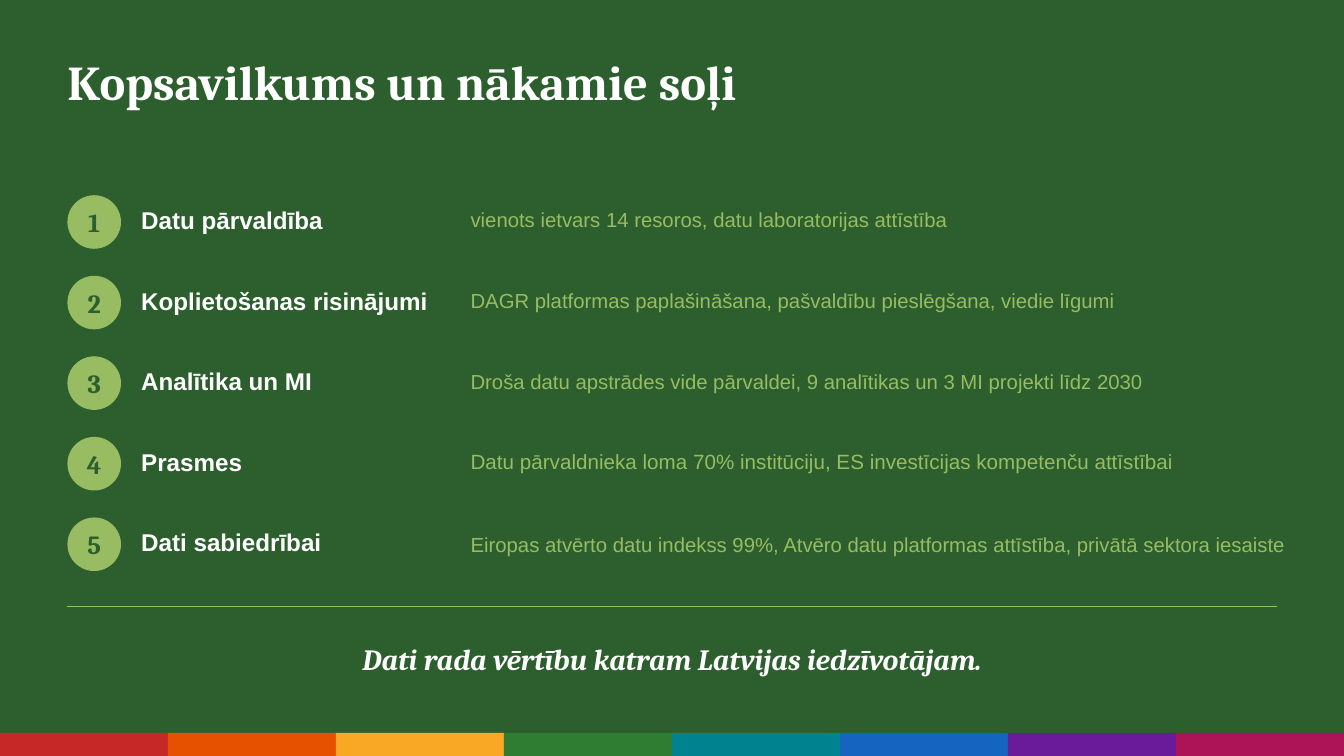
from lxml import etree
from pptx import Presentation
from pptx.dml.color import RGBColor
from pptx.enum.shapes import MSO_CONNECTOR, MSO_SHAPE
from pptx.enum.text import MSO_ANCHOR, PP_ALIGN
from pptx.oxml.ns import qn
from pptx.util import Cm, Pt

LEFT, CENTER = PP_ALIGN.LEFT, PP_ALIGN.CENTER
MIDDLE = MSO_ANCHOR.MIDDLE
OVAL, RECT = MSO_SHAPE.OVAL, MSO_SHAPE.RECTANGLE
STRAIGHT = MSO_CONNECTOR.STRAIGHT

COLORS = {"green": "2C5F2D", "lime": "97BC62", "white": "FFFFFF"}
STRIPES = ["C62828", "E65100", "F9A825", "2E7D32",
           "00838F", "1565C0", "6A1B9A", "AD1457"]
SERIF, SANS = "Cambria", "Arial"

SLIDE_W, SLIDE_H = 33.87, 19.05
MARGIN = 1.7
ROW_TOP, ROW_PITCH, ROW_H = 4.78, 2.03, 1.52
BADGE = 1.35
STRIPE_H = 0.58

# label, detail, detail size, detail width, detail shift down
STEPS = [
    ("Datu pārvaldība",
     "vienots ietvars 14 resoros, datu laboratorijas attīstība",
     14.5, 20.32, 0),
    ("Koplietošanas risinājumi",
     "DAGR platformas paplašināšana, pašvaldību pieslēgšana, viedie līgumi",
     14.5, 20.32, 0),
    ("Analītika un MI",
     "Droša datu apstrādes vide pārvaldei, 9 analītikas un 3 MI projekti līdz 2030",
     14.5, 20.32, 0),
    ("Prasmes",
     "Datu pārvaldnieka loma 70% institūciju, ES investīcijas kompetenču attīstībai",
     14.7, 20.32, 0),
    ("Dati sabiedrībai",
     "Eiropas atvērto datu indekss 99%, Atvēro datu platformas attīstība, "
     "privātā sektora iesaiste",
     14.5, 21.74, 0.06),
]


def rgb(value):
    return RGBColor.from_string(value)


def write(sp, text, size, font, color, bold=False, italic=False, align=LEFT):
    """Put one centred-in-height paragraph in a shape and return it."""
    tf = sp.text_frame
    tf.word_wrap = True
    tf.vertical_anchor = MIDDLE
    tf.margin_left = tf.margin_right = tf.margin_top = tf.margin_bottom = 0
    tf.text = text
    p = tf.paragraphs[0]
    p.alignment = align
    f = p.runs[0].font
    f.name, f.size, f.bold, f.italic = font, Pt(size), bold, italic
    f.color.rgb = rgb(COLORS[color])
    return p


def add_text(s, x, y, w, h, *args, **kwargs):
    sp = s.shapes.add_textbox(Cm(x), Cm(y), Cm(w), Cm(h))
    return write(sp, *args, **kwargs)


def add_block(s, kind, x, y, w, h, fill):
    sp = s.shapes.add_shape(kind, Cm(x), Cm(y), Cm(w), Cm(h))
    sp.shadow.inherit = False
    sp.fill.solid()
    sp.fill.fore_color.rgb = rgb(fill)
    sp.line.fill.background()
    return sp


def add_rule(s, y):
    line = s.shapes.add_connector(STRAIGHT, Cm(MARGIN), Cm(y),
                                  Cm(SLIDE_W - MARGIN), Cm(y))
    line.line.color.rgb = rgb(COLORS["lime"])
    line.line.width = Pt(0.5)
    etree.SubElement(line._element.spPr, qn("a:effectLst"))


def add_step(s, index, label, detail, size, width, shift):
    y = ROW_TOP + index * ROW_PITCH
    badge = add_block(s, OVAL, MARGIN, y + 0.14, BADGE, BADGE, COLORS["lime"])
    write(badge, str(index + 1), 18.7, SERIF, "green", bold=True, align=CENTER)
    add_text(s, 3.56, y, 8.46, ROW_H, label, 17.3, SANS, "white", bold=True)
    add_text(s, 11.86, y + shift, width, ROW_H, detail, size, SANS, "lime")


def add_stripes(s):
    w = SLIDE_W / len(STRIPES)
    for i, color in enumerate(STRIPES):
        add_block(s, RECT, i * w, SLIDE_H - STRIPE_H, w, STRIPE_H, color)


def main():
    prs = Presentation()
    prs.slide_width, prs.slide_height = Cm(SLIDE_W), Cm(SLIDE_H)
    s = prs.slides.add_slide(prs.slide_layouts[6])
    s.background.fill.solid()
    s.background.fill.fore_color.rgb = rgb(COLORS["green"])

    add_text(s, MARGIN, 1.02, 30.48, 2.03, "Kopsavilkums un nākamie soļi",
             34.7, SERIF, "white", bold=True)
    for i, step in enumerate(STEPS):
        add_step(s, i, *step)
    add_rule(s, 15.28)
    p = add_text(s, 3.39, 14.73, 27.09, 3.39,
                 "Dati rada vērtību katram Latvijas iedzīvotājam.",
                 21, SERIF, "white", bold=True, italic=True, align=CENTER)
    p.line_spacing = 1.4
    add_stripes(s)
    prs.save("out.pptx")


if __name__ == "__main__":
    main()
